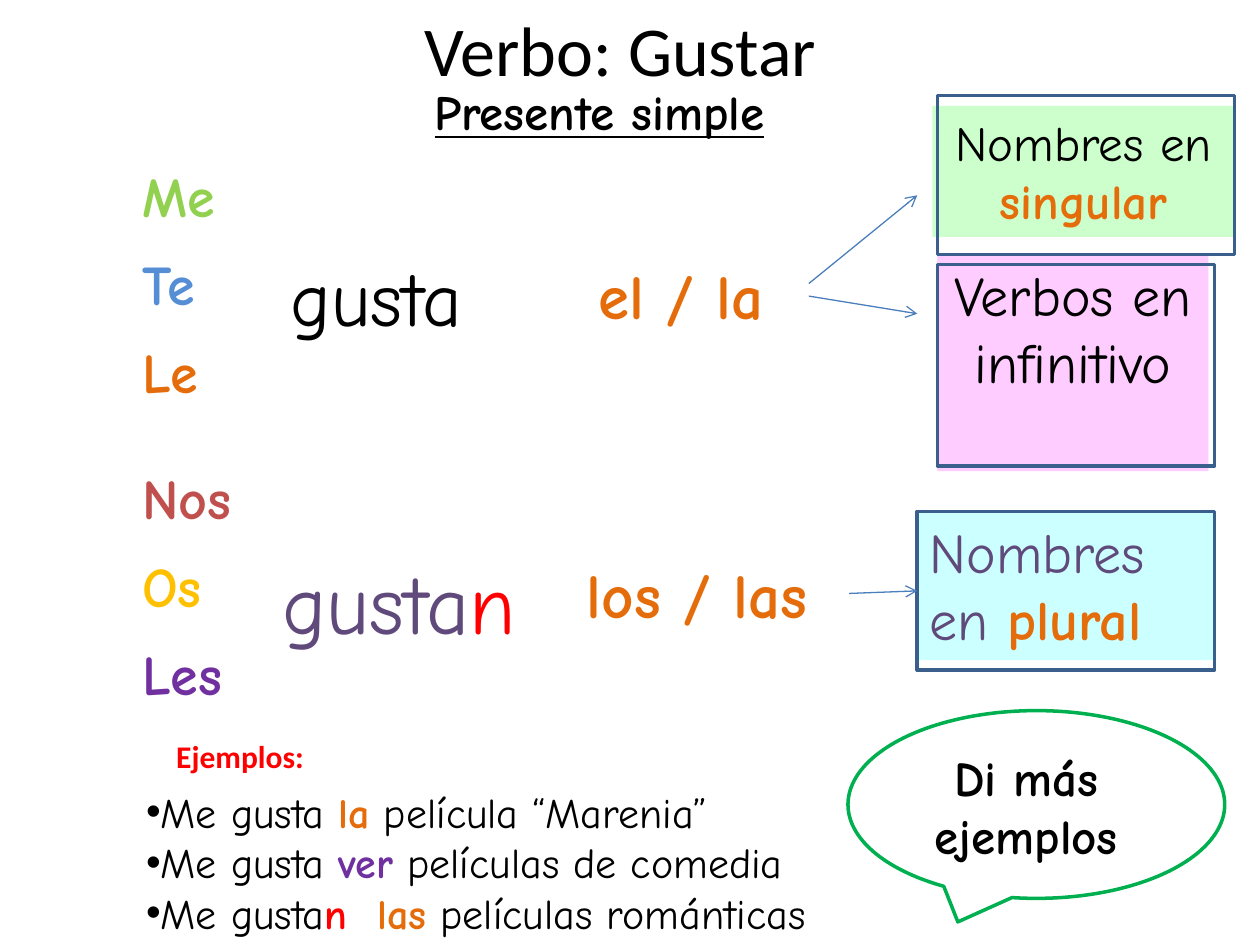
from lxml import etree
from pptx import Presentation
from pptx import util as u
from pptx.dml.color import RGBColor
from pptx.enum import shapes, text
from pptx.oxml import ns

COLORS = {
    "black": "000000", "red": "FF0000", "lime": "92D050", "blue": "558ED5",
    "orange": "E46C0A", "brick": "C0504D", "gold": "FFC000",
    "purple": "7030A0", "plum": "604A7B", "arrow": "4B7EBC",
    "frame": "3A5F8C", "green": "00B050", "mint": "CCFFCC",
    "pink": "FFCCFF", "cyan": "CCFFFF",
}
HAND, SANS = "Comic Neue", "Calibri"
SLIDE_W, SLIDE_H = u.Inches(10), u.Inches(7.5)
COLS, ROWS = 100, 75


def rgb(name):
    return RGBColor.from_string(COLORS[name])


def cell(box, x, y, w=0, h=0):
    cw, rh = SLIDE_W / COLS, SLIDE_H / ROWS
    return (round((box[0] + x) * cw), round((box[1] + y) * rh),
            round(w * cw), round(h * rh))


def write(p, content, size=28, font=HAND, color="black", bold=False,
          underline=False):
    r = p.add_run()
    r.text = content
    f = r.font
    f.size, f.name, f.bold, f.underline = u.Pt(size), font, bold, underline
    f.color.rgb = rgb(color)


def write_runs(p, runs, **fmt):
    for content, extra in runs:
        write(p, content, **{**fmt, **extra})


def label(s, area, runs, wrap=False, align=text.PP_ALIGN.LEFT, **fmt):
    sp = s.shapes.add_textbox(*area)
    tf = sp.text_frame
    tf.word_wrap = wrap
    p = tf.paragraphs[0]
    p.alignment = align
    write_runs(p, runs, **fmt)


def outline(s, area, kind, color):
    sp = s.shapes.add_shape(kind, *area)
    sp.shadow.inherit = False
    sp.fill.background()
    sp.line.color.rgb = rgb(color)
    sp.line.width = u.Pt(2)
    return sp


def card(s, area, fill, runs, align, size):
    sp = s.shapes.add_shape(shapes.MSO_SHAPE.RECTANGLE, *area)
    sp.shadow.inherit = False
    sp.fill.solid()
    sp.fill.fore_color.rgb = rgb(fill)
    sp.line.fill.background()
    tf = sp.text_frame
    tf.word_wrap = True
    tf.vertical_anchor = text.MSO_ANCHOR.TOP
    p = tf.paragraphs[0]
    p.alignment = align
    write_runs(p, runs, size=size)


def arrow(s, box, start, end, target=None):
    x1, y1 = cell(box, *start)[:2]
    x2, y2 = cell(box, *end)[:2]
    c = s.shapes.add_connector(shapes.MSO_CONNECTOR.STRAIGHT, x1, y1, x2, y2)
    if target is not None:
        c.end_connect(target, 1)
    c.line.color.rgb = rgb("arrow")
    c.line.width = u.Pt(0.75)
    ln = c.line._get_or_add_ln()
    etree.SubElement(ln, ns.qn("a:tailEnd"), type="arrow")
    etree.SubElement(c._element.spPr, ns.qn("a:effectLst"))


def place(sp, area):
    sp.left, sp.top, sp.width, sp.height = area
    sp.text_frame.auto_size = text.MSO_AUTO_SIZE.NONE


def header(s, box):
    sp = s.shapes.title
    place(sp, cell(box, 0, 0, 34.7, 7.7))
    sp.text_frame.word_wrap = False
    p = sp.text_frame.paragraphs[0]
    p.alignment = text.PP_ALIGN.LEFT
    write(p, "Verbo: Gustar", size=40, font=SANS)
    label(s, cell(box, 0.8, 6, 31.5, 5.7), [("Presente simple", {})],
          bold=True, underline=True)


def pronouns(s, box):
    sp = s.shapes.add_textbox(*cell(box, 0, 0, 11.1, 44.8))
    tf = sp.text_frame
    tf.word_wrap = False
    rows = [("Me", "lime"), ("Te", "blue"), ("Le", "orange"),
            ("Nos", "brick"), ("Os", "gold"), ("Les", "purple")]
    for i, (word, color) in enumerate(rows):
        p = tf.add_paragraph() if i else tf.paragraphs[0]
        p.space_after = u.Pt(12)
        if word == "Nos":
            p.space_before = u.Pt(21.5)
        write(p, word, size=32, color=color, bold=True)


def singular(s, box):
    rect, center = shapes.MSO_SHAPE.RECTANGLE, text.PP_ALIGN.CENTER
    label(s, cell(box, 0, 11.7, 17.6, 8.4), [("gusta", {})], size=44)
    label(s, cell(box, 24.4, 12.3, 17.8, 7.1), [("el / la", {})], True,
          size=36, color="orange", bold=True)
    arrow(s, box, (42.1, 14.9), (50.7, 7.9))
    arrow(s, box, (42.1, 15.9), (50.7, 17.3))
    card(s, cell(box, 51.9, 0.8, 24, 10.4), "mint",
         [("Nombres en ", {}), ("singular", {"color": "orange", "bold": True})],
         center, 28)
    card(s, cell(box, 52.3, 12.6, 21.5, 17.2), "pink",
         [("Verbos en infinitivo", {})], center, 32)
    outline(s, cell(box, 52.3, 0, 23.6, 12.6), rect, "frame")
    outline(s, cell(box, 52.3, 13.4, 22, 16), rect, "frame")


def plural(s, box):
    label(s, cell(box, 0, 2.6, 25.5, 9),
          [("gusta", {"color": "plum"}), ("n", {"color": "red"})],
          True, size=48)
    label(s, cell(box, 24.2, 3, 22.8, 7.1), [("los / las", {})], True,
          size=36, color="orange", bold=True)
    card(s, cell(box, 51.4, 0, 23.6, 11.8), "cyan",
         [("Nombres en ", {"color": "plum"}),
          ("plural", {"color": "orange", "bold": True})],
         text.PP_ALIGN.LEFT, 32)
    frame = outline(s, cell(box, 51.4, 0, 23.6, 12.6),
                    shapes.MSO_SHAPE.RECTANGLE, "frame")
    arrow(s, box, (46, 6.5), (51.4, 6.3), frame)


def examples(s, box):
    label(s, cell(box, 2.4, 0, 12.8, 4), [("Ejemplos:", {})],
          size=18, font=SANS, color="red", bold=True)
    sp = s.placeholders[1]
    place(sp, cell(box, 0, 3.9, 57.9, 13.1))
    tf = sp.text_frame
    tf.word_wrap = False
    orange = {"color": "orange", "bold": True}
    sentences = [
        [("Me gusta ", {}), ("la", orange), (" película “Marenia”", {})],
        [("Me gusta ", {}), ("ver", {"color": "purple", "bold": True}),
         (" películas de comedia", {})],
        [("Me gusta", {}), ("n  ", {"color": "red", "bold": True}),
         ("las", orange), (" películas románticas", {})],
    ]
    for i, runs in enumerate(sentences):
        p = tf.add_paragraph() if i else tf.paragraphs[0]
        p.space_before = u.Pt(0)
        pPr = p._p.get_or_add_pPr()
        pPr.set("marL", "0")
        pPr.set("indent", "0")
        etree.SubElement(pPr, ns.qn("a:buChar"), char="•")
        write_runs(p, runs, size=24)


def prompt(s, box):
    outline(s, cell(box, 0, 0, 29.9, 14.9),
            shapes.MSO_SHAPE.OVAL_CALLOUT, "green")
    label(s, cell(box, 4.7, 2.4, 18.9, 10.4), [("Di más ejemplos", {})], True,
          text.PP_ALIGN.CENTER, bold=True)


def main():
    prs = Presentation()
    prs.slide_width, prs.slide_height = SLIDE_W, SLIDE_H
    s = prs.slides.add_slide(prs.slide_layouts[1])
    header(s, (32.7, 0))
    pronouns(s, (10.3, 12.3))
    singular(s, (22.1, 7.6))
    plural(s, (21.4, 40.6))
    examples(s, (10.6, 58))
    prompt(s, (67.3, 56.4))
    prs.save("out.pptx")


if __name__ == "__main__":
    main()
